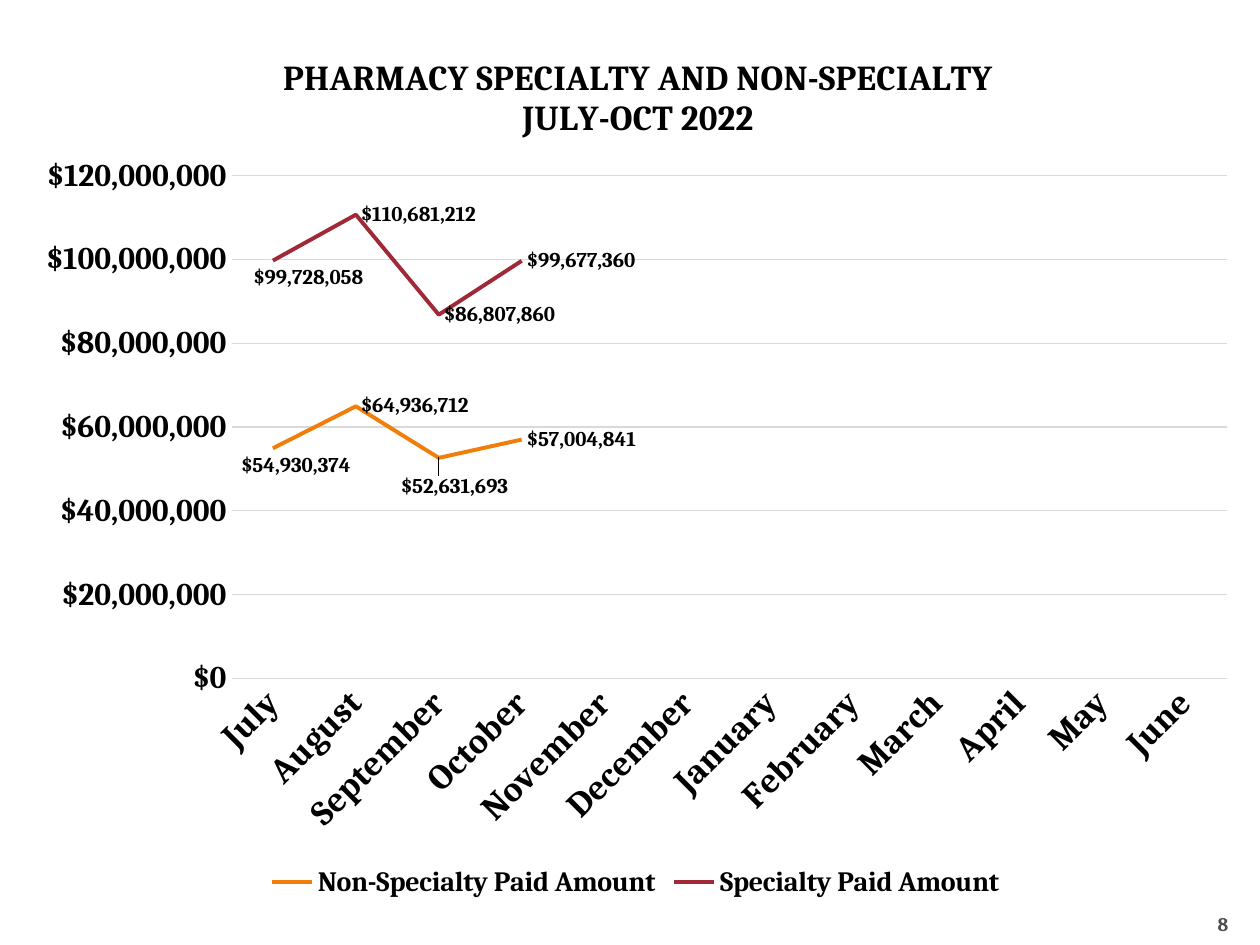
import pptx
import pptx.chart.data
import pptx.dml.color
import pptx.enum.chart
import pptx.enum.text
import pptx.oxml
import pptx.oxml.ns
import pptx.util
from dataclasses import dataclass

Inches = pptx.util.Inches
Pt = pptx.util.Pt


@dataclass(frozen=True)
class Theme:
    font: str = "Cambria"
    ink: str = "000000"
    page_ink: str = "4D4D4D"
    grid: str = "D9D9D9"
    non_specialty: str = "F07F09"
    specialty: str = "9F2936"
    title_size: int = 20
    month_size: int = 20
    dollar_size: int = 18
    legend_size: int = 16
    label_size: int = 12
    page_size: int = 11


THEME = Theme()
DOLLARS = '"$"#,##0'
MONTHS = ["July", "August", "September", "October", "November", "December",
          "January", "February", "March", "April", "May", "June"]
TITLE = "PHARMACY SPECIALTY AND NON-SPECIALTY\nJULY-OCT 2022"

# Name, colour, paid amounts, and label shifts by month index (share of chart size)
SPENDING = [
    ("Non-Specialty Paid Amount", THEME.non_specialty,
     [54930374, 64936712, 52631693, 57004841],
     {0: (-0.03, 0.02), 2: (-0.035, 0.033)}),
    ("Specialty Paid Amount", THEME.specialty,
     [99728058, 110681212, 86807860, 99677360],
     {0: (-0.02, 0.02)}),
]


def rgb(value):
    return pptx.dml.color.RGBColor.from_string(value)


def style_font(font, size, color=THEME.ink):
    font.name = THEME.font
    font.size = Pt(size)
    font.bold = True
    font.color.rgb = rgb(color)


def style_line(line, color, width):
    line.color.rgb = rgb(color)
    line.width = Pt(width)


def manual_layout(x, y, size=None, inner=False):
    """Return a c:layout element with positions as shares of the chart."""
    settings = [("layoutTarget", "inner")] if inner else []
    if inner or size:
        settings += [("xMode", "edge"), ("yMode", "edge")]
    settings += [("x", x), ("y", y)]
    if size:
        settings += [("w", size[0]), ("h", size[1])]
    body = "".join(f'<c:{tag} val="{value}"/>' for tag, value in settings)
    return pptx.oxml.parse_xml(
        f'<c:layout {pptx.oxml.ns.nsdecls("c")}>'
        f"<c:manualLayout>{body}</c:manualLayout></c:layout>")


def add_spending_chart(slide):
    spending = pptx.chart.data.CategoryChartData(number_format=DOLLARS)
    spending.categories = MONTHS
    for name, _, amounts, _ in SPENDING:
        spending.add_series(name, amounts + [None] * (len(MONTHS) - len(amounts)))
    chart = slide.shapes.add_chart(
        pptx.enum.chart.XL_CHART_TYPE.LINE,
        Inches(0.17), Inches(0.17), Inches(9.75), Inches(7), spending).chart
    chart.font.name = THEME.font
    chart.font.size = Pt(10)
    chart.plots[0].vary_by_categories = False
    return chart


def style_title(chart):
    frame = chart.chart_title.text_frame
    frame.text = TITLE
    for line in frame.paragraphs:
        style_font(line.font, THEME.title_size)
        for run in line.runs:
            style_font(run.font, THEME.title_size)
    chart.chart_title.include_in_layout = False


def style_axes(chart):
    no_tick = pptx.enum.chart.XL_TICK_MARK.NONE
    months, dollars = chart.category_axis, chart.value_axis
    for axis, size in ((months, THEME.month_size), (dollars, THEME.dollar_size)):
        axis.major_tick_mark = no_tick
        axis.minor_tick_mark = no_tick
        style_font(axis.tick_labels.font, size)
    style_line(months.format.line, THEME.grid, 0.75)
    # Slant the month names
    for body in months._element.xpath("c:txPr/a:bodyPr"):
        body.set("rot", "-2700000")
        body.set("vert", "horz")
    dollars.minimum_scale = 0
    dollars.maximum_scale = 120_000_000
    dollars.major_unit = 20_000_000
    dollars.tick_labels.number_format = DOLLARS
    dollars.tick_labels.number_format_is_linked = False
    dollars.format.line.fill.background()
    style_line(dollars.major_gridlines.format.line, THEME.grid, 0.75)


def style_series(series, color, label_shifts):
    right = pptx.enum.chart.XL_LABEL_POSITION.RIGHT
    series.smooth = False
    series.marker.style = pptx.enum.chart.XL_MARKER_STYLE.NONE
    style_line(series.format.line, color, 2.25)
    labels = series.data_labels
    labels.show_value = True
    labels.number_format = DOLLARS
    labels.number_format_is_linked = False
    labels.position = right
    style_font(labels.font, THEME.label_size)
    # Move single labels clear of the line
    for month, shift in label_shifts.items():
        label = series.points[month].data_label
        style_font(label.font, THEME.label_size)
        label.position = right
        for element in series._element.xpath(f"c:dLbls/c:dLbl[c:idx/@val='{month}']"):
            element.insert(1, manual_layout(*shift))


def style_legend(chart):
    chart.has_legend = True
    chart.legend.position = pptx.enum.chart.XL_LEGEND_POSITION.BOTTOM
    chart.legend.include_in_layout = False
    style_font(chart.legend.font, THEME.legend_size)


def place_chart_parts(chart):
    plot_area = chart._chartSpace.chart.plotArea
    for layout in plot_area.xpath("c:layout"):
        plot_area.remove(layout)
    plot_area.insert(0, manual_layout(0.171, 0.175, (0.81, 0.57), inner=True))
    title = chart.chart_title._element
    for layout in title.xpath("c:layout"):
        title.remove(layout)
    title.insert(1, manual_layout(0.21, 0.035, (0.58, 0.09)))


def add_page_number(slide, number):
    box = slide.shapes.add_textbox(Inches(9.25), Inches(7.02), Inches(0.5), Inches(0.4))
    frame = box.text_frame
    frame.word_wrap = True
    frame.vertical_anchor = pptx.enum.text.MSO_ANCHOR.BOTTOM
    frame.margin_left = frame.margin_right = frame.margin_bottom = 0
    frame.margin_top = Inches(0.05)
    frame.text = number
    paragraph = frame.paragraphs[0]
    paragraph.alignment = pptx.enum.text.PP_ALIGN.RIGHT
    style_font(paragraph.runs[0].font, THEME.page_size, THEME.page_ink)


def main():
    deck = pptx.Presentation()
    deck.slide_width, deck.slide_height = Inches(10), Inches(7.5)
    slide = deck.slides.add_slide(deck.slide_layouts[6])

    add_page_number(slide, "8")

    # Paid amounts by month
    chart = add_spending_chart(slide)
    style_title(chart)
    style_axes(chart)
    for series, (_, color, _, label_shifts) in zip(chart.plots[0].series, SPENDING):
        style_series(series, color, label_shifts)
    style_legend(chart)
    place_chart_parts(chart)

    deck.save("out.pptx")


if __name__ == "__main__":
    main()
